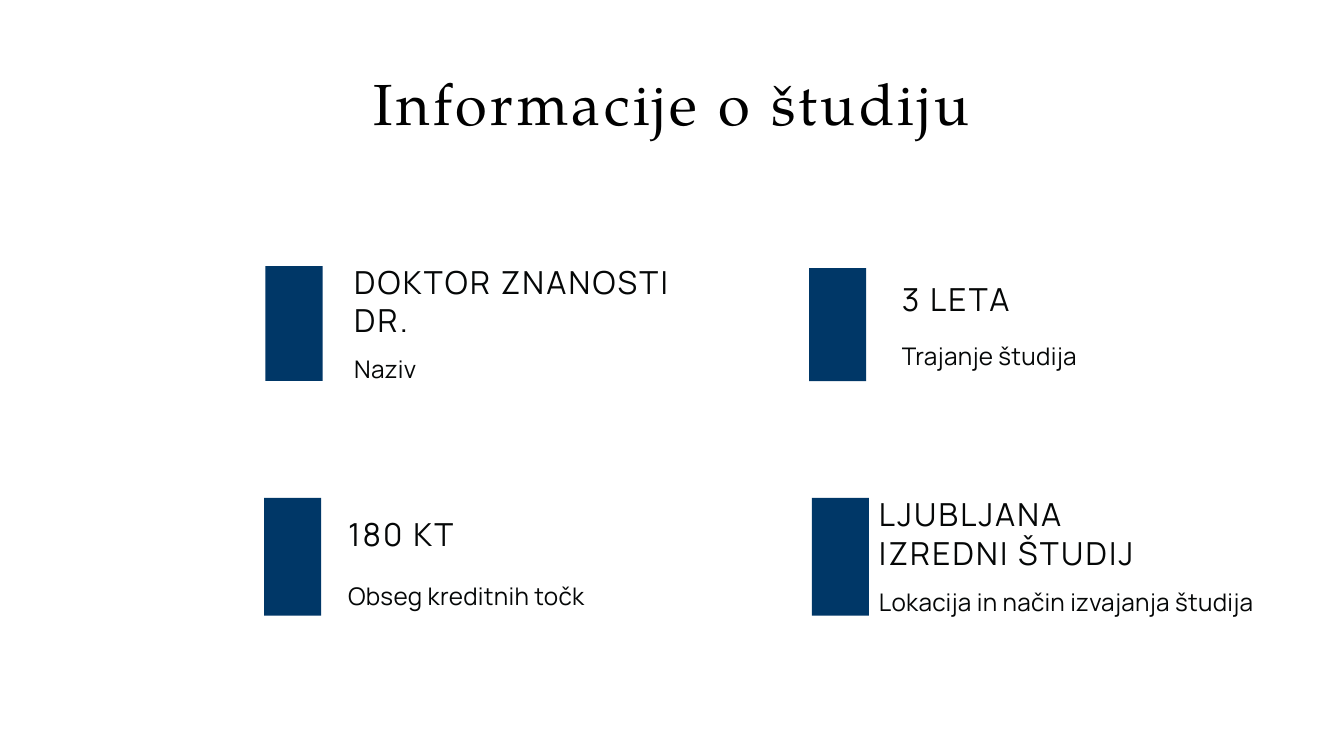
from dataclasses import dataclass

from pptx import Presentation
from pptx.dml.color import RGBColor
from pptx.enum.shapes import MSO_SHAPE as Shape
from pptx.enum.text import MSO_AUTO_SIZE as AutoSize, PP_ALIGN as Align
from pptx.util import Inches, Pt


class Theme:
    BAR = RGBColor(0x00, 0x37, 0x67)
    # size, line spacing and letter spacing in points
    TITLE = dict(name="TeX Gyre Pagella", size=62, color="000000", line=86.8, spacing=3.7)
    HEADING = dict(name="Manrope", size=34, color="050707", line=40.8, spacing=2.4)
    CAPTION = dict(name="Manrope", size=26, color="050707", line=36.4, spacing=0.3)


@dataclass
class Fact:
    heading: list
    caption: str
    box: tuple          # bar left, top, height
    text_dx: float      # text offset from the bar's left
    heading_at: tuple   # offset from the bar's top, width, height
    caption_at: tuple


FACTS = [
    Fact(["DOKTOR ZNANOSTI", "DR."], "Naziv",
         (3.95, 3.96, 1.71), 1.32, (-0.05, 5.24, 1.15), (1.24, 5.24, 0.47)),
    Fact(["180 KT"], "Obseg kreditnih točk",
         (3.93, 7.41, 1.75), 1.25, (0.25, 4.82, 0.39), (1.17, 4.82, 0.34)),
    Fact(["3 LETA"], "Trajanje študija",
         (12.04, 3.99, 1.68), 1.38, (0.17, 3.78, 0.35), (1.01, 3.78, 0.31)),
    Fact(["LJUBLJANA", "IZREDNI ŠTUDIJ"], "Lokacija in način izvajanja študija",
         (12.08, 7.41, 1.75), 1.0, (-0.04, 4.95, 1.15), (1.25, 5.86, 0.5)),
]
BAR_WIDTH = 0.85


def add_text(shapes, box, lines, style, align=Align.LEFT):
    tf = shapes.add_textbox(*map(Inches, box)).text_frame
    frame = dict(margin_left=0, margin_top=0, margin_right=0, margin_bottom=0,
                 word_wrap=True, auto_size=AutoSize.SHAPE_TO_FIT_TEXT)
    for key, value in frame.items():
        setattr(tf, key, value)
    for i, line in enumerate(lines):
        p = tf.paragraphs[0] if i == 0 else tf.add_paragraph()
        p.alignment = align
        p.line_spacing = Pt(style["line"])
        r = p.add_run()
        r.text = line
        for key, value in dict(name=style["name"], size=Pt(style["size"])).items():
            setattr(r.font, key, value)
        r.font.color.rgb = RGBColor.from_string(style["color"])
        r._r.get_or_add_rPr().set("spc", str(round(style["spacing"] * 100)))


def add_title(s, box, text):
    add_text(s.shapes, box, [text], Theme.TITLE, Align.CENTER)


def add_fact(s, fact):
    left, top, height = fact.box
    # Caption and heading
    group = s.shapes.add_group_shape()
    for lines, style, (dy, w, h) in (
        ([fact.caption], Theme.CAPTION, fact.caption_at),
        (fact.heading, Theme.HEADING, fact.heading_at),
    ):
        add_text(group.shapes, (left + fact.text_dx, top + dy, w, h), lines, style)
    # Colour bar
    bar = s.shapes.add_shape(Shape.RECTANGLE, *map(Inches, (left, top, BAR_WIDTH, height)))
    bar.shadow.inherit = False
    bar.fill.solid()
    bar.fill.fore_color.rgb = Theme.BAR
    bar.line.fill.background()


def main():
    prs = Presentation()
    prs.slide_width, prs.slide_height = Inches(20), Inches(11.25)
    s = prs.slides.add_slide(prs.slide_layouts[6])
    for fact in FACTS:
        add_fact(s, fact)
    add_title(s, (4.38, 0.84, 11.24, 1.12), "Informacije o študiju")
    prs.save("out.pptx")


if __name__ == "__main__":
    main()
